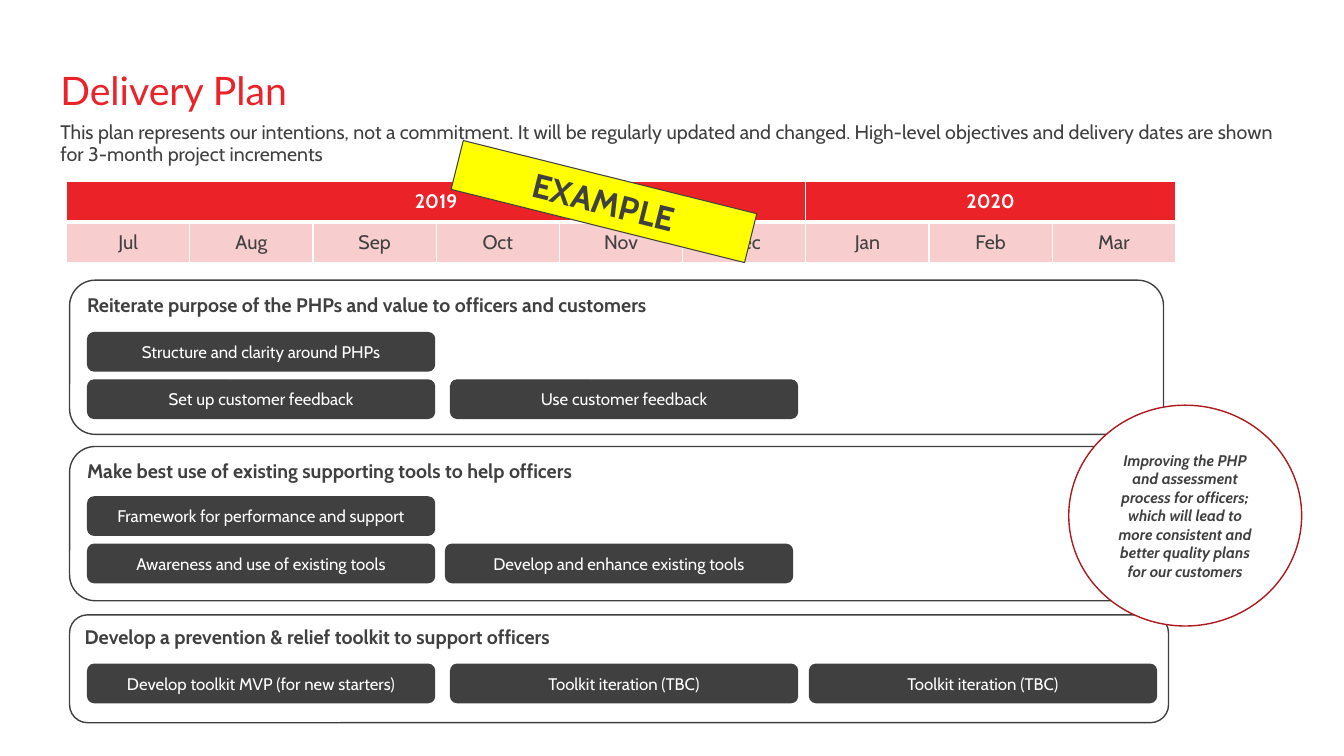
import pptx
import pptx.util
import pptx.dml.color
import pptx.enum.shapes
import pptx.enum.text
import pptx.oxml
import pptx.oxml.ns

Inches = pptx.util.Inches
Pt = pptx.util.Pt
Shape = pptx.enum.shapes.MSO_SHAPE
Align = pptx.enum.text.PP_ALIGN
Anchor = pptx.enum.text.MSO_ANCHOR

DARK, RED, PINK, WHITE = "404041", "EB2227", "F7CDCD", "FFFFFF"
MONTHS = ["Jul", "Aug", "Sep", "Oct", "Nov", "Dec", "Jan", "Feb", "Mar"]
YEARS = [("2019", 0, 5), ("2020", 6, 8)]
GOALS = [
    (2.78, 10.85, 1.53, "Reiterate purpose of the PHPs and value to officers and customers"),
    (4.43, 10.85, 1.53, "Make best use of existing supporting tools to help officers"),
    (6.1, 10.9, 1.07, "Develop a prevention & relief toolkit to support officers"),
]
TASKS = [
    (0.87, 3.3, "Structure and clarity around PHPs"),
    (0.87, 3.77, "Set up customer feedback"),
    (4.47, 3.77, "Use customer feedback"),
    (0.87, 4.93, "Framework for performance and support"),
    (0.87, 5.4, "Awareness and use of existing tools"),
    (4.42, 5.4, "Develop and enhance existing tools"),
    (0.87, 6.59, "Develop toolkit MVP (for new starters)"),
    (4.47, 6.59, "Toolkit iteration (TBC)"),
    (8.03, 6.59, "Toolkit iteration (TBC)"),
]


def color(code):
    return pptx.dml.color.RGBColor.from_string(code)


def write(frame, text, size, ink=DARK, bold=False, align=Align.LEFT, face="Cabin"):
    para = frame.paragraphs[0]
    para.text = text
    para.alignment = align
    font = para.font
    font.name, font.size, font.bold = face, Pt(size), bold
    font.color.rgb = color(ink)
    return para


def add_text(slide, box, text, size, before, **style):
    frame = slide.shapes.add_textbox(*map(Inches, box)).text_frame
    frame.word_wrap = True
    para = write(frame, text, size, **style)
    para.line_spacing = 0.9
    para.space_before = Pt(before)
    return para


def add_box(slide, kind, box, text, size, fill=WHITE, line=DARK, width=1,
            anchor=Anchor.MIDDLE, align=Align.CENTER, **style):
    shape = slide.shapes.add_shape(kind, *map(Inches, box))
    shape.shadow.inherit = False
    shape.fill.solid()
    shape.fill.fore_color.rgb = color(fill)
    shape.line.color.rgb = color(line)
    shape.line.width = Pt(width)
    shape.text_frame.word_wrap = True
    shape.text_frame.vertical_anchor = anchor
    write(shape.text_frame, text, size, align=align, **style)
    return shape


def set_edges(cell, base):
    props = cell._tc.get_or_add_tcPr()
    sides = [("lnL", 1), ("lnR", 1), ("lnT", 1), ("lnB", base)]
    for place, (side, width) in enumerate(sides):
        edge = pptx.oxml.parse_xml(
            f'<a:{side} {pptx.oxml.ns.nsdecls("a")} w="{Pt(width)}">'
            f'<a:solidFill><a:srgbClr val="{WHITE}"/></a:solidFill></a:{side}>')
        props.insert(place, edge)


def add_months(slide):
    frame = slide.shapes.add_table(
        2, len(MONTHS), Inches(0.66), Inches(1.8), Inches(11), Inches(0.81))
    table = frame.table
    for col in table.columns:
        col.width = Inches(11 / len(MONTHS))
    for row, (fill, base) in enumerate([(RED, 3), (PINK, 1)]):
        for col in range(len(MONTHS)):
            cell = table.cell(row, col)
            cell.fill.solid()
            cell.fill.fore_color.rgb = color(fill)
            cell.vertical_anchor = Anchor.MIDDLE
            set_edges(cell, base)
    for year, first, last in YEARS:
        cell = table.cell(0, first)
        cell.merge(table.cell(0, last))
        write(cell.text_frame, year, 14, WHITE, True, Align.CENTER)
    for col, month in enumerate(MONTHS):
        write(table.cell(1, col).text_frame, month, 14, align=Align.CENTER)


def main():
    deck = pptx.Presentation()
    deck.slide_width, deck.slide_height = Inches(13.33), Inches(7.5)
    slide = deck.slides.add_slide(deck.slide_layouts[6])

    add_text(slide, (0.5, 0.66, 5.89, 0.61), "Delivery Plan", 28, 10, ink=RED, face="Lato")
    add_months(slide)
    for top, width, height, goal in GOALS:
        add_box(slide, Shape.ROUNDED_RECTANGLE, (0.69, top, width, height), goal, 14,
                anchor=Anchor.TOP, align=Align.LEFT, bold=True)
    for left, top, task in TASKS:
        add_box(slide, Shape.ROUNDED_RECTANGLE, (left, top, 3.44, 0.38), task, 12,
                fill=DARK, ink=WHITE)
    intro = add_text(
        slide, (0.5, 1.17, 12.29, 0.92),
        "This plan represents our intentions, not a commitment. It will be regularly updated "
        "and changed. High-level objectives and delivery dates are shown for 3-month project "
        "increments", 14, 5)
    intro.space_after = Pt(12)
    aim = add_box(
        slide, Shape.OVAL, (10.6, 4.02, 2.31, 2.19),
        "Improving the PHP and assessment process for officers; which will lead to more "
        "consistent and better quality plans for our customers", 11, line="AE191D", bold=True)
    aim.text_frame.paragraphs[0].font.italic = True
    label = add_box(slide, Shape.RECTANGLE, (4.49, 1.75, 3, 0.5), "EXAMPLE", 24,
                    fill="FFFF00", width=0.75, anchor=Anchor.TOP, bold=True)
    label.rotation = 14
    deck.save("out.pptx")


if __name__ == "__main__":
    main()
